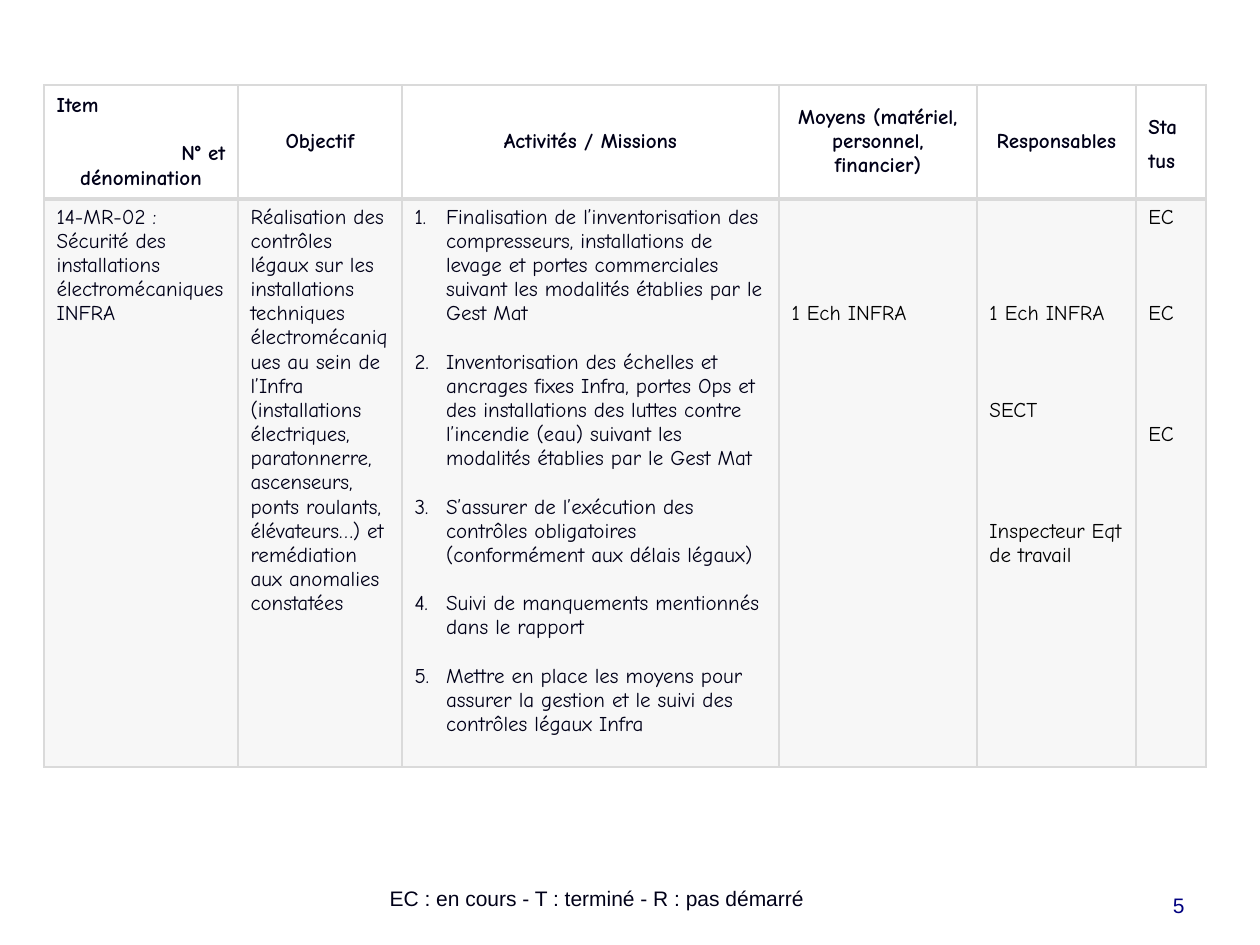
from lxml import etree
from pptx import Presentation
from pptx.dml.color import RGBColor
from pptx.enum.text import MSO_ANCHOR, PP_ALIGN
from pptx.oxml.ns import qn
from pptx.util import Emu, Pt

LEFT, CENTER, RIGHT = PP_ALIGN.LEFT, PP_ALIGN.CENTER, PP_ALIGN.RIGHT
TOP, MIDDLE, BOTTOM = MSO_ANCHOR.TOP, MSO_ANCHOR.MIDDLE, MSO_ANCHOR.BOTTOM
COLORS = {"ink": "000018", "black": "000000", "number": "000080", "grid": "DADADA"}
TABLE_FONT, FOOTER_FONT = "Comic Neue", "Arial"
LINE = 24.14
COLUMNS = [194, 164, 377, 198, 159, 70]
ROWS = [114, 568]

# Each paragraph is (text, empty lines above it, alignment).
HEADERS = [
    [("Item", 0, LEFT), ("N° et", 1, RIGHT), ("dénomination", 0, CENTER)],
    [("Objectif", 0, CENTER)],
    [("Activités / Missions", 0, CENTER)],
    [("Moyens (matériel, personnel, financier)", 0, CENTER)],
    [("Responsables", 0, CENTER)],
    [("Sta", 0, LEFT), ("tus", 0.4, LEFT)],
]
ACTIVITIES = [
    "Finalisation de l’inventorisation des compresseurs, installations de levage et portes "
    "commerciales suivant les modalités établies par le Gest Mat",
    "Inventorisation des échelles et ancrages fixes Infra, portes Ops et des installations des "
    "luttes contre l’incendie (eau) suivant les modalités établies par le Gest Mat",
    "S’assurer de l’exécution des contrôles obligatoires (conformément aux délais légaux)",
    "Suivi de manquements mentionnés dans le rapport",
    "Mettre en place les moyens pour assurer la gestion et le suivi des contrôles légaux Infra",
]
BODY = [
    [("14-MR-02 : Sécurité des installations électromécaniques INFRA", 0, LEFT)],
    [("Réalisation des contrôles légaux sur les installations techniques électromécaniques au "
      "sein de l’Infra (installations électriques, paratonnerre, ascenseurs, ponts roulants, "
      "élévateurs…) et remédiation aux anomalies constatées", 0, LEFT)],
    [(text, min(index, 1), LEFT) for index, text in enumerate(ACTIVITIES)],
    [("1 Ech INFRA", 0, LEFT)],
    [("1 Ech INFRA", 0, LEFT), ("SECT", 3, LEFT), ("Inspecteur Eqt de travail", 4, LEFT)],
    [("EC", 0, LEFT), ("EC", 3, LEFT), ("EC", 4, LEFT)],
]
HEADER_OFFSETS = [0, 0, 0, 0, 0, 1]
BODY_OFFSETS = [0, 0, 0, 4, 4, 0]


def px(value):
    """Turn pixels into EMU."""
    return Emu(round(value * 914400 / 126))


def add_span(para, text, font, color, bold=False):
    """Add one formatted run to a paragraph."""
    span = para.add_run()
    span.text = text
    span.font.name = font
    span.font.size = Pt(12)
    span.font.bold = bold
    span.font.color.rgb = RGBColor.from_string(COLORS[color])


def add_label(page, box, text, color, align, anchor):
    """Place one line of footer text in the given box."""
    frame = page.shapes.add_textbox(*map(px, box)).text_frame
    frame.word_wrap = True
    frame.vertical_anchor = anchor
    para = frame.paragraphs[0]
    para.alignment = align
    add_span(para, text, FOOTER_FONT, color)


def set_borders(cell, top, bottom):
    """Draw the four borders of a cell, with top and bottom widths in points."""
    properties = cell._tc.get_or_add_tcPr()
    widths = {"a:lnL": 1, "a:lnR": 1, "a:lnT": top, "a:lnB": bottom}
    for position, (tag, width) in enumerate(widths.items()):
        line = etree.Element(qn(tag), w=str(Pt(width)))
        fill = etree.SubElement(line, qn("a:solidFill"))
        etree.SubElement(fill, qn("a:srgbClr"), val=COLORS["grid"])
        properties.insert(position, line)


def tint(cell):
    """Fill a cell with the grid colour at one fifth opacity."""
    cell.fill.solid()
    cell.fill.fore_color.rgb = RGBColor.from_string(COLORS["grid"])
    color = cell._tc.tcPr.find(".//" + qn("a:srgbClr"))
    etree.SubElement(color, qn("a:alpha"), val="20000")


def number(para):
    """Turn a paragraph into an item of a numbered list."""
    properties = para._p.get_or_add_pPr()
    properties.set("marL", "228600")
    properties.set("indent", "-228600")
    etree.SubElement(properties, qn("a:buFont"), typeface="+mj-lt")
    etree.SubElement(properties, qn("a:buAutoNum"), type="arabicPeriod")


def write_cell(cell, paragraphs, offset, color, bold=False, numbered=False):
    """Write paragraphs into a cell, starting a number of lines below its top."""
    cell.margin_left = cell.margin_right = px(12.6)
    cell.margin_top = px(6.3 + offset * LINE)
    cell.margin_bottom = px(6.3)
    frame = cell.text_frame
    for index, (text, gap, align) in enumerate(paragraphs):
        para = frame.add_paragraph() if index else frame.paragraphs[0]
        para.alignment = align
        if gap:
            para.space_before = Pt(round(gap * LINE * 72 / 126, 1))
        if numbered:
            number(para)
        add_span(para, text, TABLE_FONT, color, bold)


def add_plan(page, left, top):
    """Place the action plan table with its header and body rows."""
    box = map(px, (left, top, sum(COLUMNS), sum(ROWS)))
    table = page.shapes.add_table(len(ROWS), len(COLUMNS), *box).table
    table.first_row = table.horz_banding = False
    for row, height in zip(table.rows, ROWS):
        row.height = px(height)
    for index, width in enumerate(COLUMNS):
        table.columns[index].width = px(width)
        header, body = table.cell(0, index), table.cell(1, index)
        write_cell(header, HEADERS[index], HEADER_OFFSETS[index], "ink", bold=True)
        header.vertical_anchor = TOP if HEADER_OFFSETS[index] else MIDDLE
        header.fill.background()
        set_borders(header, 1, 2)
        color = "ink" if index < 3 else "black"
        write_cell(body, BODY[index], BODY_OFFSETS[index], color, numbered=index == 2)
        tint(body)
        set_borders(body, 2, 1)


def main():
    """Build the deck and save it."""
    deck = Presentation()
    deck.slide_width, deck.slide_height = px(1260), px(945)
    page = deck.slides.add_slide(deck.slide_layouts[6])
    add_label(page, (903, 861, 294, 63), "5", "number", RIGHT, BOTTOM)
    add_plan(page, 44, 85)
    add_label(page, (282, 879, 630, 38), "EC : en cours - T : terminé - R : pas démarré",
              "ink", CENTER, TOP)
    deck.save("out.pptx")


if __name__ == "__main__":
    main()
